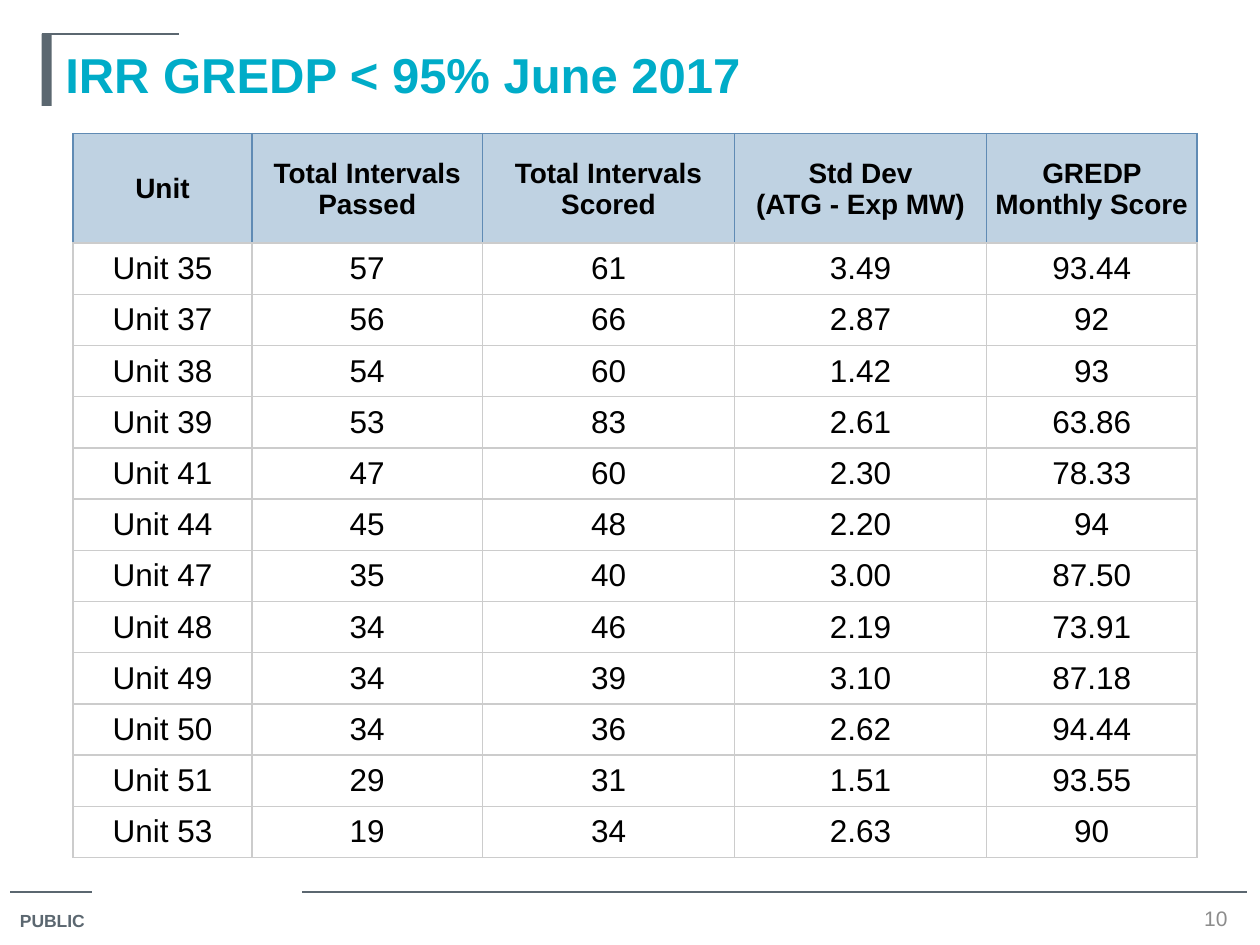
from lxml.etree import SubElement as Sub
from pptx import Presentation
from pptx.dml.color import RGBColor as RGB
from pptx.enum.shapes import MSO_CONNECTOR as Conn, MSO_SHAPE as Shape
from pptx.enum.text import MSO_ANCHOR as Anchor, PP_ALIGN as Align
from pptx.oxml.ns import qn
from pptx.util import Inches as In, Pt

COLORS = {"slate": "5B6770", "teal": "00ACC8", "gray": "8C8C8C", "black": "000000",
          "head": "BFD2E2", "edge": "608BB4", "rule": "CCCCCC", "white": "FFFFFF"}
TITLE = "IRR GREDP < 95% June 2017"
HEADS = ["Unit", "Total Intervals Passed", "Total Intervals Scored",
         "Std Dev\n(ATG - Exp MW)", "GREDP Monthly Score"]
ROWS = [
    ("Unit 35", "57", "61", "3.49", "93.44"),
    ("Unit 37", "56", "66", "2.87", "92"),
    ("Unit 38", "54", "60", "1.42", "93"),
    ("Unit 39", "53", "83", "2.61", "63.86"),
    ("Unit 41", "47", "60", "2.30", "78.33"),
    ("Unit 44", "45", "48", "2.20", "94"),
    ("Unit 47", "35", "40", "3.00", "87.50"),
    ("Unit 48", "34", "46", "2.19", "73.91"),
    ("Unit 49", "34", "39", "3.10", "87.18"),
    ("Unit 50", "34", "36", "2.62", "94.44"),
    ("Unit 51", "29", "31", "1.51", "93.55"),
    ("Unit 53", "19", "34", "2.63", "90"),
]
WIDE, HIGH = 10, 7.5
COLS = [1.42, 1.83, 2, 2, 1.67]
LEFT, TOP, TALL, HEAD = 0.58, 1.06, 5.75, 0.87
STEP = (TALL - HEAD) / len(ROWS)
BAR_X, BAR_Y = 0.33, 0.27
FOOT_Y = 7.08
LINES = [(0.08, 0.73, FOOT_Y), (2.4, 9.9, FOOT_Y), (BAR_X, 1.42, BAR_Y)]


def color(name):
    return RGB.from_string(COLORS[name])


def write(frame, text, size=18, ink="black", bold=False, align=Align.CENTER):
    for i, line in enumerate(text.split("\n")):
        para = frame.add_paragraph() if i else frame.paragraphs[0]
        para.alignment = align
        run = para.add_run()
        run.text = line
        font = run.font
        font.name, font.size, font.bold = "Arial", Pt(size), bold
        font.color.rgb = color(ink)


def add_text(slide, box, text, wrap=True, inset=(0.1, 0.05), **style):
    frame = slide.shapes.add_textbox(*map(In, box)).text_frame
    frame.word_wrap = wrap
    frame.margin_left = frame.margin_right = In(inset[0])
    frame.margin_top = frame.margin_bottom = In(inset[1])
    write(frame, text, **style)


def add_line(slide, x1, x2, y):
    line = slide.shapes.add_connector(Conn.STRAIGHT, In(x1), In(y), In(x2), In(y))
    line.line.color.rgb = color("slate")
    line.line.width = Pt(0.75)
    Sub(line._element.spPr, qn("a:effectLst"))


def set_edges(cell, sides):
    """Draw 1 pt borders in the order left, right, top, bottom."""
    props = cell._tc.get_or_add_tcPr()
    for i, (tag, name) in enumerate(zip(("lnL", "lnR", "lnT", "lnB"), sides)):
        edge = Sub(props, qn("a:" + tag), w=str(Pt(1)))
        props.insert(i, edge)
        Sub(Sub(edge, qn("a:solidFill")), qn("a:srgbClr"), val=COLORS[name])


def add_scores(slide):
    data = [HEADS, *ROWS]
    table = slide.shapes.add_table(len(data), len(COLS), In(LEFT), In(TOP),
                                   In(sum(COLS)), In(TALL)).table
    table.horz_banding = False
    for col, width in zip(table.columns, COLS):
        col.width = In(width)
    for r, row in enumerate(data):
        top = r == 0
        table.rows[r].height = In(HEAD if top else STEP)
        for c, text in enumerate(row):
            cell = table.cell(r, c)
            cell.margin_left = cell.margin_right = cell.margin_top = In(0.01 if top else 0)
            cell.margin_bottom = 0
            cell.vertical_anchor = Anchor.MIDDLE
            cell.fill.solid()
            cell.fill.fore_color.rgb = color("head" if top else "white")
            set_edges(cell, ["edge" if top else "rule"] * 3 + ["rule"])
            write(cell.text_frame, text, size=16 if top else 18, bold=top)


def main():
    deck = Presentation()
    deck.slide_width, deck.slide_height = In(WIDE), In(HIGH)
    slide = deck.slides.add_slide(deck.slide_layouts[6])
    for line in LINES:
        add_line(slide, *line)
    bar = slide.shapes.add_shape(Shape.RECTANGLE, In(BAR_X), In(BAR_Y), In(0.08), In(0.57))
    bar.shadow.inherit = False
    bar.fill.solid()
    bar.fill.fore_color.rgb = color("slate")
    bar.line.fill.background()
    add_text(slide, (0.06, 7.17, 0.77, 0.28), "PUBLIC", wrap=False,
             size=10, ink="slate", bold=True, align=Align.LEFT)
    add_text(slide, (9.44, 7.19, 0.42, 0.23), "10", inset=(0, 0), size=12, ink="gray")
    add_text(slide, (0.42, BAR_Y, 9.25, 0.78), TITLE, inset=(0.1, 0.08),
             size=28, ink="teal", bold=True, align=Align.LEFT)
    add_scores(slide)
    deck.save("out.pptx")


if __name__ == "__main__":
    main()
